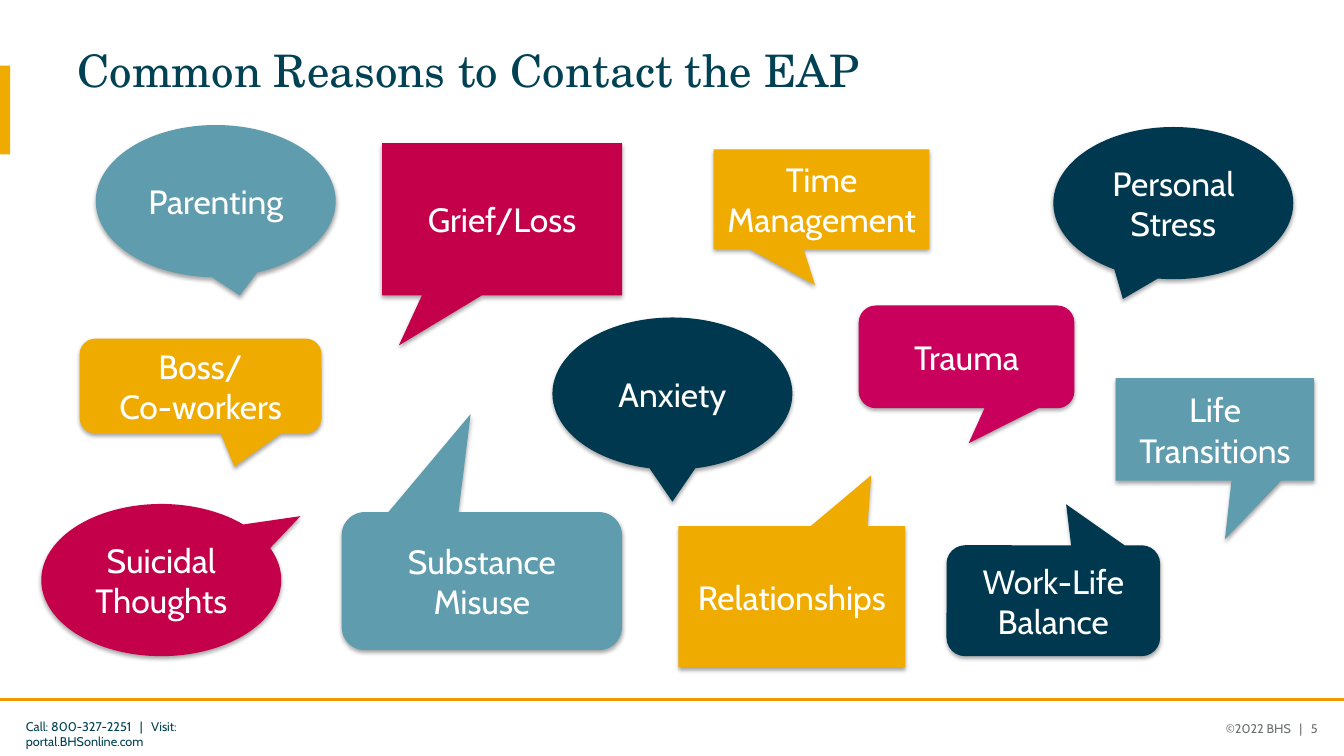
from pptx import Presentation
from pptx.dml.color import RGBColor
from pptx.enum.shapes import MSO_CONNECTOR as Conn, MSO_SHAPE as Kind
from pptx.enum.text import MSO_ANCHOR as Anchor, PP_ALIGN as Align
from pptx.oxml import parse_xml
from pptx.oxml.ns import nsdecls
from pptx.util import Pt

SANS, SERIF = "Cabin", "TeX Gyre Schola"
NAVY, TEAL, GOLD, RED, PINK = "00394F", "5E9CAE", "F0AB00", "C4004A", "CA005D"
INK, GRAY, WHITE = "004153", "6C6F6F", "FFFFFF"
OVAL = Kind.OVAL_CALLOUT
RECT = Kind.RECTANGULAR_CALLOUT
ROUND = Kind.ROUNDED_RECTANGULAR_CALLOUT
BIG = (171.4, 108.7)

BUBBLES = [
    ("Personal Stress", OVAL, NAVY, (752.4, 90.7), BIG, (-0.21, 0.63)),
    ("Relationships", RECT, GOLD, (484.6, 375.8), (162, 100.8), (0.35, -0.86)),
    ("Substance Misuse", ROUND, TEAL, (244.1, 365.8), (200.2, 98.6), (-0.04, -1.21)),
    ("Anxiety", OVAL, NAVY, (394.6, 226.8), BIG, (0, 0.71)),
    ("Grief/Loss", RECT, RED, (272.9, 102.2), BIG, (-0.43, 0.83)),
    ("Boss/\nCo-workers", ROUND, GOLD, (56.9, 241.9), (172.8, 67.7), (0.14, 0.85)),
    ("Suicidal Thoughts", OVAL, RED, (29.5, 360), BIG, (0.58, -0.42)),
    ("Time Management", RECT, GOLD, (509.8, 106.6), (154.1, 71.3), (-0.03, 0.86)),
    ("Parenting", OVAL, TEAL, (68.4, 89.3), BIG, (0.1, 0.62)),
    ("Trauma", ROUND, PINK, (613.4, 218.2), (154.1, 73.4), (0.01, 0.84)),
    ("Work-Life\nBalance", ROUND, NAVY, (676.1, 389.5), (152.6, 79.2), (0.06, -0.87)),
    ("Life Transitions", RECT, TEAL, (797, 270), (141.8, 73.4), (0.05, 1.07)),
]


def color(code):
    """Turn a hex string into a colour."""
    return RGBColor.from_string(code)


def write(shape, text, size, font, tint, align, anchor):
    """Fill a shape with wrapped text in one style."""
    frame = shape.text_frame
    frame.word_wrap = True
    frame.vertical_anchor = anchor
    frame.text = text
    for par in frame.paragraphs:
        par.alignment = align
        par.font.size = Pt(size)
        par.font.name = font
        par.font.color.rgb = color(tint)


def label(slide, text, at, size, font, tint, align=Align.LEFT, anchor=Anchor.TOP):
    """Add a text box."""
    box = slide.shapes.add_textbox(*map(Pt, at))
    write(box, text, size, font, tint, align, anchor)


def block(slide, kind, at, tint):
    """Add a plain filled shape without outline."""
    shape = slide.shapes.add_shape(kind, *map(Pt, at))
    shape.shadow.inherit = False
    shape.fill.solid()
    shape.fill.fore_color.rgb = color(tint)
    shape.line.fill.background()
    return shape


def shade(shape):
    """Give a shape a soft shadow straight below it."""
    effects = shape.element.spPr.find(
        "{http://schemas.openxmlformats.org/drawingml/2006/main}effectLst")
    effects.append(parse_xml(
        f'<a:outerShdw {nsdecls("a")} blurRad="{Pt(3.1)}" dist="{Pt(1.8)}" '
        'dir="5400000" rotWithShape="0"><a:srgbClr val="000000">'
        '<a:alpha val="35000"/></a:srgbClr></a:outerShdw>'))


def bubble(slide, text, kind, tint, place, size, tip):
    """Add a speech bubble whose tail ends at tip."""
    shape = block(slide, kind, place + size, tint)
    shape.adjustments[0], shape.adjustments[1] = tip
    shade(shape)
    write(shape, text, 24, SANS, WHITE, Align.CENTER, Anchor.MIDDLE)


def rule(slide, top, width, tint, weight):
    """Add a horizontal line from the left edge."""
    line = slide.shapes.add_connector(Conn.STRAIGHT, 0, Pt(top), width, Pt(top))
    line.line.color.rgb = color(tint)
    line.line.width = Pt(weight)
    line.element.spPr.append(parse_xml(f'<a:effectLst {nsdecls("a")}/>'))


def main():
    """Build the slide and save it."""
    deck = Presentation()
    deck.slide_width, deck.slide_height = Pt(960), Pt(540)
    slide = deck.slides.add_slide(deck.slide_layouts[6])
    label(slide, "Call: 800-327-2251   |   Visit: portal.BHSonline.com",
          (11.5, 509.8, 200, 18), 9, SANS, INK)
    label(slide, "©2022 BHS   |   5", (680.4, 511.2, 267.8, 18),
          9, SANS, GRAY, Align.RIGHT)
    rule(slide, 499.7, deck.slide_width, "F09A00", 1.75)
    block(slide, Kind.RECTANGLE, (0, 46.8, 7.2, 63.4), GOLD)
    label(slide, "Common Reasons to Contact the EAP", (48.2, 28.1, 792, 43.9),
          32, SERIF, INK, anchor=Anchor.MIDDLE)
    for item in BUBBLES:
        bubble(slide, *item)
    deck.save("out.pptx")


if __name__ == "__main__":
    main()
